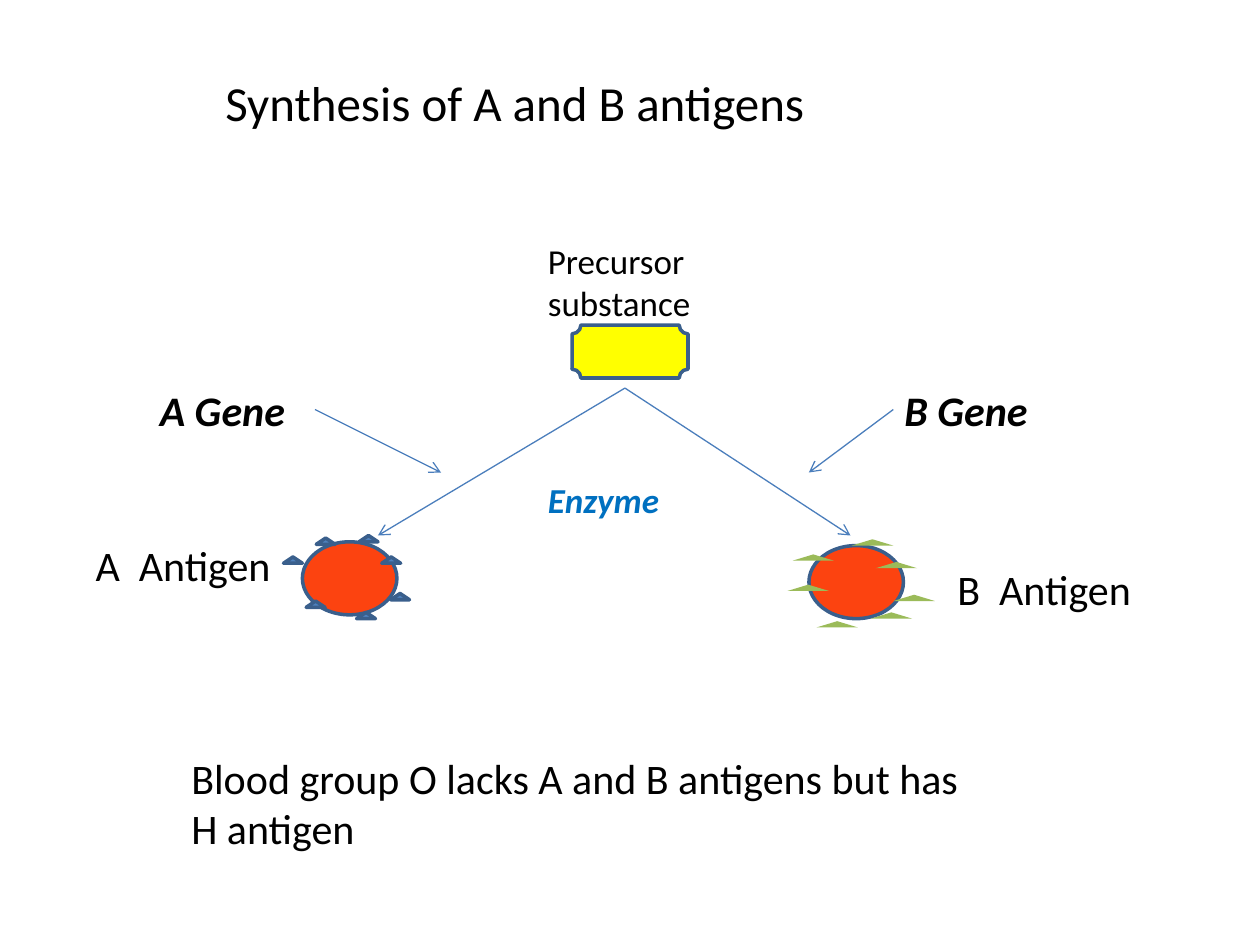
from dataclasses import dataclass

from lxml import etree
from pptx import Presentation
from pptx.dml.color import RGBColor
from pptx.enum.shapes import MSO_CONNECTOR, MSO_SHAPE
from pptx.enum.text import MSO_ANCHOR, MSO_AUTO_SIZE, PP_ALIGN
from pptx.oxml.ns import qn
from pptx.util import Pt

STRAIGHT = MSO_CONNECTOR.STRAIGHT
PLAQUE, OVAL, TRIANGLE = MSO_SHAPE.PLAQUE, MSO_SHAPE.OVAL, MSO_SHAPE.ISOSCELES_TRIANGLE
MIDDLE, CENTER = MSO_ANCHOR.MIDDLE, PP_ALIGN.CENTER
NO_FIT, GROW = MSO_AUTO_SIZE.NONE, MSO_AUTO_SIZE.SHAPE_TO_FIT_TEXT
SCALE = 9144


@dataclass(frozen=True)
class Theme:
    """Colours, font and type sizes of the slide."""
    font: str = "Calibri"
    ink: str = "000000"
    enzyme: str = "0070C0"
    precursor: str = "FFFF00"
    cell: str = "FC4310"
    antigen_a: str = "4F81BD"
    antigen_b: str = "9BBB59"
    outline: str = "3A5F8C"
    arrow: str = "4B7EBC"
    title: int = 28
    body: int = 24
    small: int = 20
    outline_width: float = 2
    arrow_width: float = 0.75


def px(*values):
    """Turn px lengths into EMU."""
    return [v * SCALE for v in values]


def write(tf, text, *, theme, size, color, bold=False, italic=False, align=None):
    """Put one formatted paragraph into a text frame."""
    tf.word_wrap = True
    p = tf.paragraphs[0]
    p.alignment = align
    r = p.add_run()
    r.text = text
    r.font.name = theme.font
    r.font.size = Pt(size)
    r.font.bold, r.font.italic = bold, italic
    r.font.color.rgb = RGBColor.from_string(color)


class Builder:
    """Draws styled elements on the current slide."""

    def __init__(self, s, theme):
        """Keep the slide and its theme."""
        self.s, self.theme = s, theme

    def title(self, text, box):
        """Fill and place the title placeholder."""
        sp = self.s.shapes.title
        sp.left, sp.top, sp.width, sp.height = px(*box)
        tf = sp.text_frame
        tf.auto_size, tf.vertical_anchor = NO_FIT, MIDDLE
        write(tf, text, theme=self.theme, size=self.theme.title,
              color=self.theme.ink, align=CENTER)

    def label(self, text, box, size, color=None, strong=False):
        """Add a text box, bold and italic when strong."""
        tf = self.s.shapes.add_textbox(*px(*box)).text_frame
        write(tf, text, theme=self.theme, size=size, color=color or self.theme.ink,
              bold=strong, italic=strong)
        tf.auto_size = GROW

    def shape(self, kind, box, fill, outlined=True):
        """Add a filled preset shape."""
        sp = self.s.shapes.add_shape(kind, *px(*box))
        sp.shadow.inherit = False
        sp.fill.solid()
        sp.fill.fore_color.rgb = RGBColor.from_string(fill)
        if outlined:
            sp.line.color.rgb = RGBColor.from_string(self.theme.outline)
            sp.line.width = Pt(self.theme.outline_width)
        else:
            sp.line.fill.background()

    def arrow(self, start, end):
        """Add a thin line with an open arrowhead at its end."""
        c = self.s.shapes.add_connector(STRAIGHT, *px(*start, *end))
        c.line.color.rgb = RGBColor.from_string(self.theme.arrow)
        c.line.width = Pt(self.theme.arrow_width)
        etree.SubElement(c.line._get_or_add_ln(), qn("a:tailEnd"), type="arrow")
        etree.SubElement(c._element.spPr, qn("a:effectLst"))

    def antigens(self, points, width, fill, outlined):
        """Scatter equal flat triangles at the given corners."""
        for x, y in points:
            self.shape(TRIANGLE, (x, y, width, 5), fill, outlined)


def main():
    """Build and save the slide."""
    prs = Presentation()
    prs.slide_width, prs.slide_height = px(1000, 750)
    t = Theme()
    b = Builder(prs.slides.add_slide(prs.slide_layouts[5]), t)

    b.title("Synthesis of A and B antigens", (42, 42, 733, 78))
    b.shape(PLAQUE, (454, 258, 92, 42), t.precursor)
    b.label("Precursor substance", (425, 185, 150, 77), t.small)
    b.label("A  Antigen", (66, 423, 175, 50), t.body)
    b.label("B  Antigen", (750, 442, 158, 50), t.body)
    b.label("A Gene", (117, 300, 158, 50), t.body, strong=True)
    b.label("B Gene", (708, 300, 133, 50), t.body, strong=True)
    b.label("Enzyme", (425, 375, 192, 44), t.small, t.enzyme, strong=True)

    fork = (496, 308)
    for start, end in (((250, 325), (350, 375)), ((709, 325), (642, 375)),
                       (fork, (300, 425)), (fork, (675, 425))):
        b.arrow(start, end)

    for x, y in ((240, 430), (642, 433)):
        b.shape(OVAL, (x, y, 75, 58), t.cell)
    b.antigens([(283, 486), (310, 471), (243, 477), (303, 442), (225, 442),
                (251, 427), (285, 425)], 15, t.antigen_a, True)
    b.antigens([(648, 493), (709, 472), (695, 446), (625, 464), (629, 440),
                (676, 428), (691, 486)], 33, t.antigen_b, False)

    b.label("Blood group O lacks A and B antigens but has H antigen",
            (142, 592, 633, 91), t.body)
    prs.save("out.pptx")


if __name__ == "__main__":
    main()
